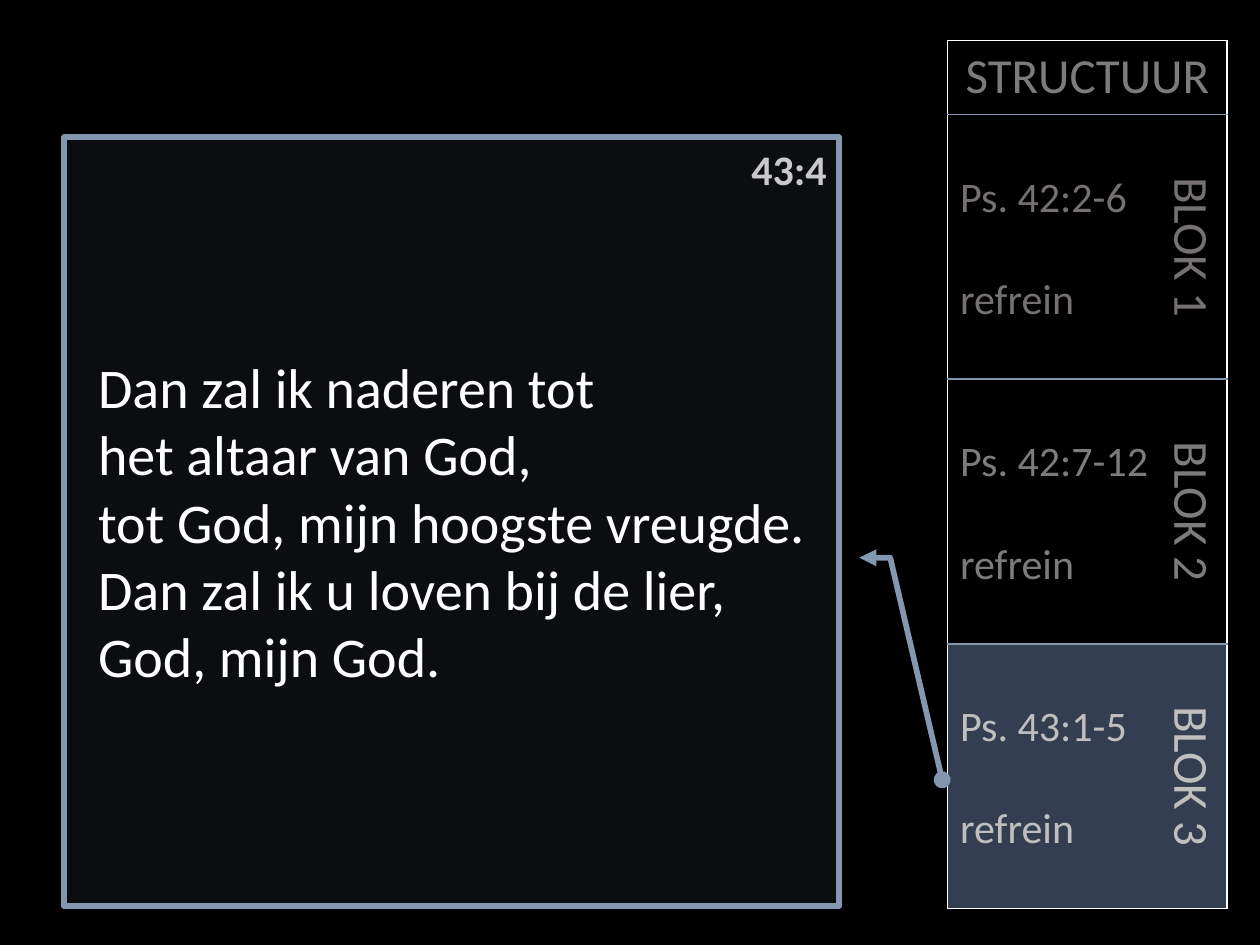
from lxml import etree
from pptx import Presentation
from pptx.dml.color import RGBColor
from pptx.enum.shapes import MSO_SHAPE
from pptx.enum.text import MSO_ANCHOR, MSO_AUTO_SIZE, PP_ALIGN
from pptx.oxml.ns import qn
from pptx.util import Inches, Pt

LEFT, MID, RIGHT = PP_ALIGN.LEFT, PP_ALIGN.CENTER, PP_ALIGN.RIGHT
TOP, MIDDLE = MSO_ANCHOR.TOP, MSO_ANCHOR.MIDDLE
GROW = MSO_AUTO_SIZE.SHAPE_TO_FIT_TEXT
CALLOUT = MSO_SHAPE.LINE_CALLOUT_2

THEME = {
    "font": "Calibri", "back": "000000", "edge": "FFFFFF", "rule": "8497B0",
    "panel": "222A35", "live": "333F50", "head": "7C7C7C", "verse": "C9C9C9",
    "body": "FFFFFF", "tones": ("767171", "7C7C7C", "BFBFBF"),
    "small": 24, "label": 28, "large": 32,
}
GAP = Pt(29.3)

deck = Presentation()
deck.slide_width, deck.slide_height = Inches(10), Inches(7.5)
UNIT = deck.slide_width / 100
slide = deck.slides.add_slide(deck.slide_layouts[6])
slide.background.fill.solid()
slide.background.fill.fore_color.rgb = RGBColor.from_string(THEME["back"])


def write(frame, lines, size, tone, align=LEFT, bold=False, gap=0):
    look = {"name": THEME["font"], "size": Pt(size), "bold": bold}
    for i, line in enumerate(lines):
        para = frame.paragraphs[0] if i == 0 else frame.add_paragraph()
        para.alignment = align
        if i and gap:
            para.space_before = gap
        run = para.add_run()
        run.text = line
        for key, value in look.items():
            setattr(run.font, key, value)
        run.font.color.rgb = RGBColor.from_string(tone)


def border(cell, tones):
    props = cell._tc.get_or_add_tcPr()
    for i, side in enumerate("LRTB"):
        line = etree.Element(qn(f"a:ln{side}"), w=str(Pt(1)))
        if side in tones:
            fill = etree.SubElement(line, qn("a:solidFill"))
            etree.SubElement(fill, qn("a:srgbClr"), val=tones[side])
        else:
            etree.SubElement(line, qn("a:noFill"))
        props.insert(i, line)


cols, rows = (17.7, 4.5), (5.9, 21, 21, 21)
area = [round(n * UNIT) for n in (75.2, 3.2, sum(cols), sum(rows))]
grid = slide.shapes.add_table(len(rows), len(cols), *area).table
for key in ("first_row", "horz_banding"):
    setattr(grid, key, False)
for col, wide in zip(grid.columns, cols):
    col.width = round(wide * UNIT)
for row, high in zip(grid.rows, rows):
    row.height = round(high * UNIT)

grid.cell(0, 0).merge(grid.cell(0, 1))
write(grid.cell(0, 0).text_frame, ["STRUCTUUR"], THEME["label"], THEME["head"], MID)
parts = ("Ps. 42:2-6", "Ps. 42:7-12", "Ps. 43:1-5")
for n, (part, tone) in enumerate(zip(parts, THEME["tones"]), 1):
    psalm, block = grid.cell(n, 0), grid.cell(n, 1)
    psalm.margin_top = Inches(0.05) + GAP
    write(psalm.text_frame, [part, "refrein"], THEME["small"], tone, gap=GAP)
    write(block.text_frame, [f"BLOK {n}"], THEME["label"], tone, MID)
    block.vertical_anchor = MIDDLE
    block._tc.get_or_add_tcPr().set("vert", "vert")

last = len(rows) - 1
for r in range(len(rows)):
    for c in range(len(cols)):
        cell = grid.cell(r, c)
        if r == last:
            cell.fill.solid()
            cell.fill.fore_color.rgb = RGBColor.from_string(THEME["live"])
        else:
            cell.fill.background()
        tones = {
            "T": THEME["rule" if r else "edge"],
            "B": THEME["rule" if r < last else "edge"],
            "R" if c else "L": THEME["edge"],
        }
        if r == 0:
            tones.update(L=THEME["edge"], R=THEME["edge"])
        border(cell, tones)

area = [round(n * UNIT) for n in (5.1, 10.9, 61.5, 61)]
panel = slide.shapes.add_shape(CALLOUT, *area)
panel.shadow.inherit = False
for i, value in enumerate((0.547, 1.026, 0.547, 1.066, 0.836, 1.133)):
    panel.adjustments[i] = value
panel.fill.solid()
panel.fill.fore_color.rgb = RGBColor.from_string(THEME["panel"])
shade = panel.fill._xPr.find(qn("a:solidFill"))[0]
etree.SubElement(shade, qn("a:alpha"), val="33000")
panel.line.color.rgb = RGBColor.from_string(THEME["rule"])
panel.line.width = Pt(3.25)
stroke = panel.line._get_or_add_ln()
for end, kind in (("headEnd", "triangle"), ("tailEnd", "oval")):
    etree.SubElement(stroke, qn(f"a:{end}"), type=kind)

song = [
    "Dan zal ik naderen tot",
    "het altaar van God,",
    "tot God, mijn hoogste vreugde.",
    "Dan zal ik u loven bij de lier,",
    "God, mijn God.",
]
boxes = (
    ((54.8, 10.9, 11.8, 5), ["43:4"], THEME["small"], THEME["verse"], RIGHT, True),
    ((6.8, 27.5, 58.7, 27.9), song, THEME["large"], THEME["body"], LEFT, False),
)
shape = {"word_wrap": True, "auto_size": GROW, "vertical_anchor": TOP}
for place, *text in boxes:
    frame = slide.shapes.add_textbox(*(round(n * UNIT) for n in place)).text_frame
    for key, value in shape.items():
        setattr(frame, key, value)
    write(frame, *text)

deck.save("out.pptx")
